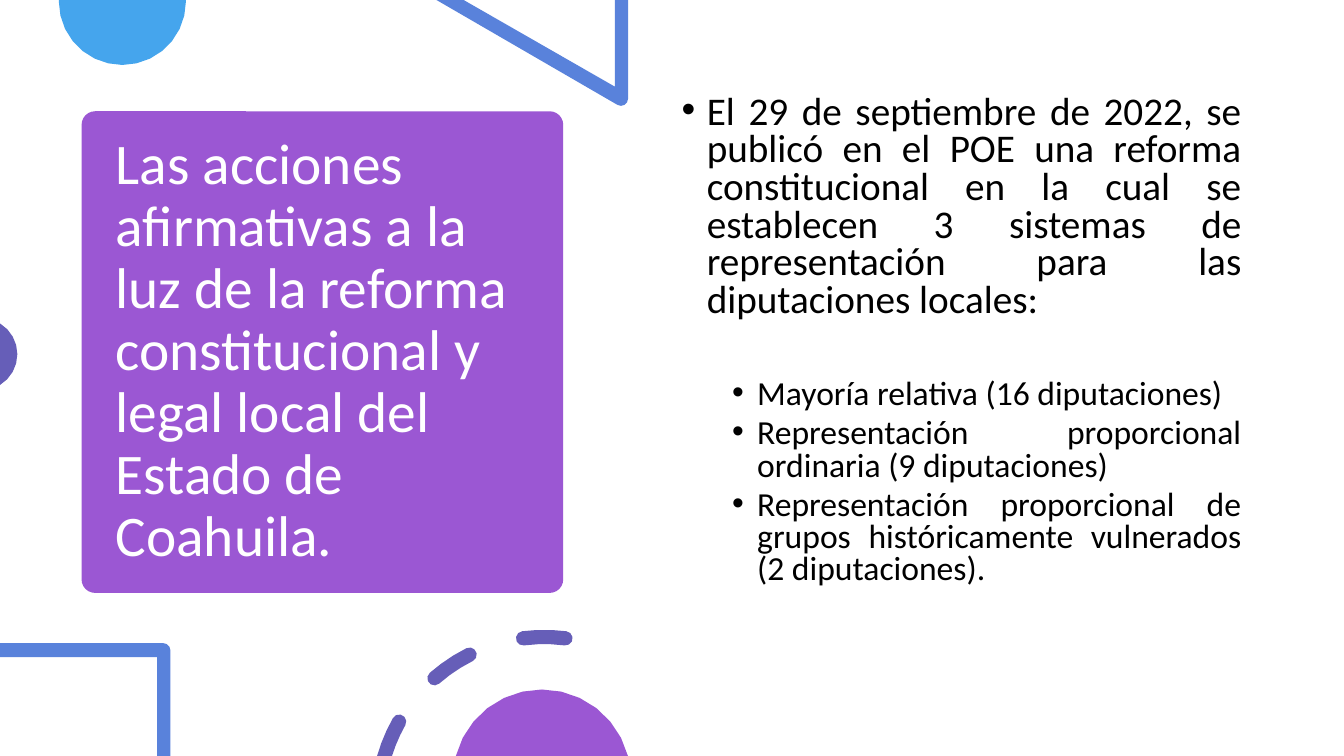
from dataclasses import dataclass
from math import cos, radians, sin

from lxml.etree import SubElement
from pptx import Presentation
from pptx.dml.color import RGBColor
from pptx.enum.shapes import MSO_SHAPE as Preset
from pptx.enum.text import MSO_ANCHOR as Anchor, PP_ALIGN as Align
from pptx.oxml.ns import qn
from pptx.shapes.base import BaseShape
from pptx.slide import Slide
from pptx.util import Pt

Point = tuple[float, float]
Contour = list[Point]

COLORS = {
    "card": "9B57D3", "sky": "45A5ED", "blue": "5982DB",
    "violet": "665EB8", "white": "FFFFFF", "black": "000000",
}
FONT = "Calibri"
SLIDE_WIDTH, SLIDE_HEIGHT = 960, 540
DASH_CENTER = (388.8, 574.1)
DASH_RADIUS, DASH_HALF_WIDTH = 119.1, 5.1


@dataclass
class Ornament:
    color: str
    contours: list[Contour]


@dataclass
class Entry:
    text: str
    size: float
    color: str
    format: dict
    indent: float = 0
    hanging: float = 0


def arc(center: Point, radius: float, start: float, end: float, steps: int) -> Contour:
    """Points along a circle, in degrees, clockwise from the right."""
    angles = [radians(start + (end - start) * i / steps) for i in range(steps + 1)]
    return [(center[0] + radius * cos(a), center[1] + radius * sin(a)) for a in angles]


def dash_edge(side: int, start: float, end: float) -> Contour:
    """Outer (side 1) or inner (side -1) edge of a dash."""
    return arc(DASH_CENTER, DASH_RADIUS + side * DASH_HALF_WIDTH, start, end, 3)


def dash_cap(angle: float, turn: float) -> Contour:
    """Half-round end of a dash, without the corners it shares with the edges."""
    middle = arc(DASH_CENTER, DASH_RADIUS, angle, angle, 1)[0]
    return arc(middle, DASH_HALF_WIDTH, turn, turn + 180, 5)[1:-1]


def dash(start: float, end: float) -> Contour:
    return (dash_edge(1, start, end) + dash_cap(end, end)
            + dash_edge(-1, end, start) + dash_cap(start, start + 180))


def cut_dash(end: float) -> Contour:
    """Dash that runs down to the bottom edge of the slide."""
    return dash_edge(1, 195.94, end) + dash_cap(end, end) + dash_edge(-1, end, 197.4)


def paint(shape: BaseShape, color: str) -> None:
    shape.shadow.inherit = False
    shape.fill.solid()
    shape.fill.fore_color.rgb = RGBColor.from_string(COLORS[color])
    shape.line.fill.background()


def add_ornament(slide: Slide, ornament: Ornament) -> None:
    builder = None
    for contour in ornament.contours:
        start, *rest = [(Pt(x), Pt(y)) for x, y in contour]
        if builder is None:
            builder = slide.shapes.build_freeform(*start)
        else:
            builder.move_to(*start)
        builder.add_line_segments(rest, close=True)
    paint(builder.convert_to_shape(), ornament.color)


def add_entries(slide: Slide, box: tuple[float, ...], anchor: Anchor, entries: list[Entry]) -> None:
    frame = slide.shapes.add_textbox(*map(Pt, box)).text_frame
    frame.word_wrap = True
    frame.vertical_anchor = anchor
    for index, entry in enumerate(entries):
        paragraph = frame.add_paragraph() if index else frame.paragraphs[0]
        for name, value in entry.format.items():
            setattr(paragraph, name, value)
        run = paragraph.add_run()
        run.text = entry.text
        for name, value in {"name": FONT, "size": Pt(entry.size)}.items():
            setattr(run.font, name, value)
        run.font.color.rgb = RGBColor.from_string(COLORS[entry.color])
        if entry.hanging:
            properties = paragraph._p.get_or_add_pPr()
            properties.set("marL", str(Pt(entry.indent)))
            properties.set("indent", str(-Pt(entry.hanging)))
            SubElement(properties, qn("a:buFont"), typeface="Arial")
            SubElement(properties, qn("a:buChar"), char="•")


ORNAMENTS = [
    Ornament("sky", [[(132.8, 0), (42, 0)] + arc((87.4, 1), 45.4, 180, 0, 14)]),
    Ornament("blue", [[(448.6, 0), (439.2, 0), (439.2, 61.9), (331.2, 0), (311.8, 0)]
                      + arc((443.6, 70.6), 5, 120, 0, 4)]),
    Ornament("violet", [arc((-13.3, 253), 25.7, -58.8, 58.8, 8)]),
    Ornament("blue", [[(0, 459.4)] + arc((116.7, 464.4), 5, 270, 360, 3)
                      + [(121.7, 540), (112.3, 540), (112.3, 469.4), (0, 469.4)]]),
    Ornament("violet", [cut_dash(209.5), dash(228.8, 243.4), dash(262.7, 277.3)]),
    Ornament("card", [arc((387.1, 556), 63.5, 194.6, 345.4, 12)]),
]

TITLE = Entry(
    "Las acciones afirmativas a la luz de la reforma constitucional y legal local "
    "del Estado de Coahuila.", 41, "white", {"line_spacing": 0.9})

BODY_FORMAT = {"alignment": Align.JUSTIFY, "line_spacing": 0.8}
REFORM = Entry(
    "El 29 de septiembre de 2022, se publicó en el POE una reforma constitucional "
    "en la cual se establecen 3 sistemas de representación para las diputaciones locales:",
    28, "black", BODY_FORMAT | {"space_before": Pt(10)}, 18, 18)
SYSTEMS = [
    Entry(text, 24, "black", BODY_FORMAT | {"level": 1, "space_before": Pt(gap)}, 54, 18)
    for text, gap in [
        ("Mayoría relativa (16 diputaciones)", 42),
        ("Representación proporcional ordinaria (9 diputaciones)", 5),
        ("Representación proporcional de grupos históricamente vulnerados (2 diputaciones).", 5),
    ]
]


def main() -> None:
    deck = Presentation()
    deck.slide_width, deck.slide_height = Pt(SLIDE_WIDTH), Pt(SLIDE_HEIGHT)
    slide = deck.slides.add_slide(deck.slide_layouts[6])

    card = slide.shapes.add_shape(Preset.ROUNDED_RECTANGLE, *map(Pt, (58.3, 79.5, 344, 344)))
    card.adjustments[0] = 0.028
    paint(card, "card")
    add_entries(slide, (75.5, 87.2, 310.3, 328.3), Anchor.MIDDLE, [TITLE])
    for ornament in ORNAMENTS:
        add_ornament(slide, ornament)
    add_entries(slide, (479.8, 64.3, 414, 385.2), Anchor.TOP, [REFORM, *SYSTEMS])

    deck.save("out.pptx")


if __name__ == "__main__":
    main()
